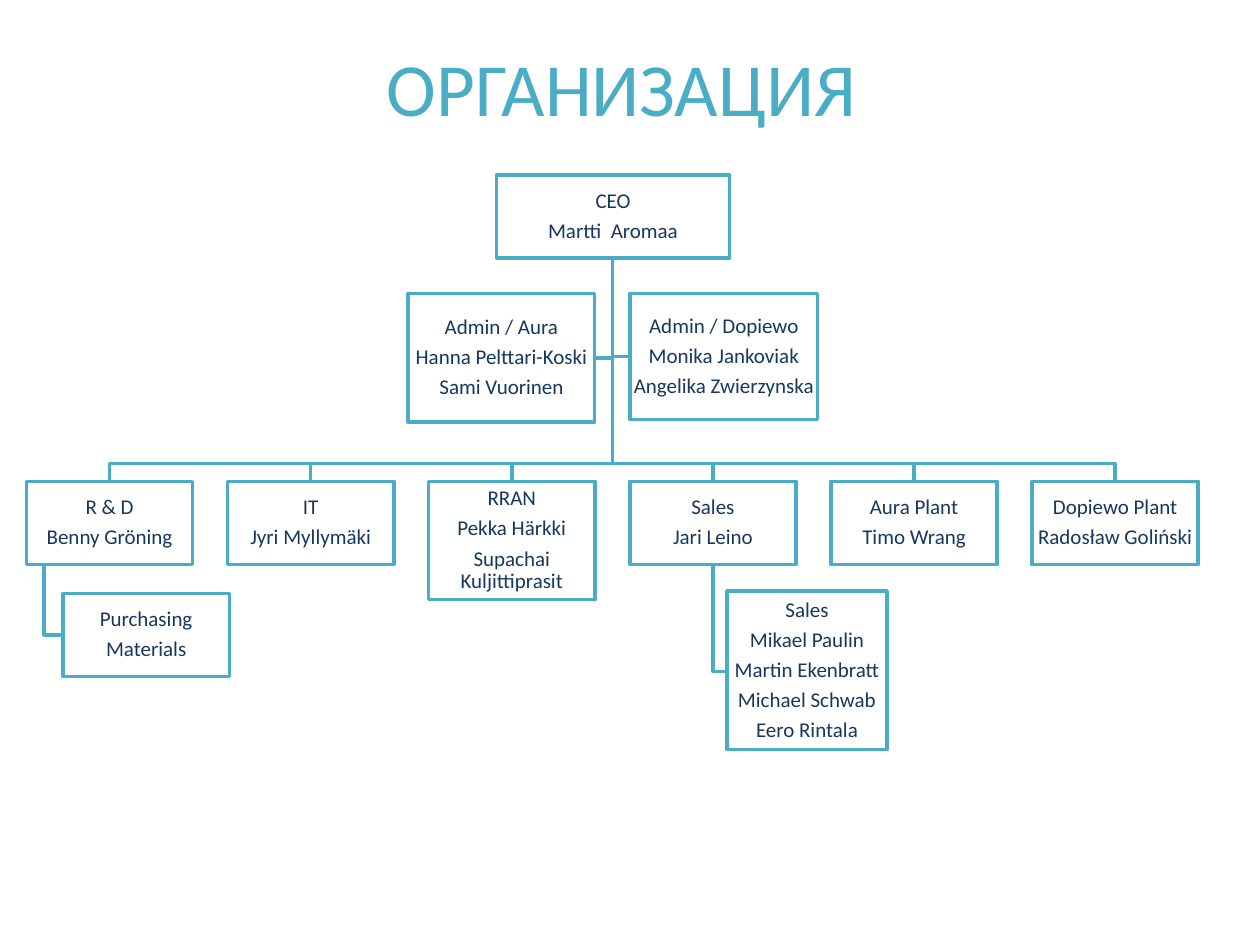
from pptx import Presentation
from pptx import util as u
from pptx.dml.color import RGBColor
from pptx.enum import shapes, text

TEAL = RGBColor(0x4B, 0xAC, 0xC6)
NAVY = RGBColor(0x17, 0x37, 0x5E)

COLUMNS, ROWS = 100, 75
CENTRE = 48.6
CEO_BOTTOM = 20.5
BUS_ROW = 36.8
UNIT_LEFT, UNIT_TOP, UNIT_STEP = 2.1, 38.2, 15.96
UNIT_WIDTH, UNIT_HEIGHT = 13.2, 6.6

UNITS = [
    (["R & D", "Benny Gröning"], UNIT_HEIGHT),
    (["IT", "Jyri Myllymäki"], UNIT_HEIGHT),
    (["RRAN", "Pekka Härkki", "Supachai Kuljittiprasit"], 9.4),
    (["Sales", "Jari Leino"], UNIT_HEIGHT),
    (["Aura Plant", "Timo Wrang"], UNIT_HEIGHT),
    (["Dopiewo Plant", "Radosław Goliński"], UNIT_HEIGHT),
]
STAFF = [
    (["CEO", "Martti  Aromaa"], (39.4, 13.9, 18.5, 6.6)),
    (["Admin / Aura", "Hanna Pelttari-Koski", "Sami Vuorinen"],
     (32.4, 23.3, 14.8, 10.2)),
    (["Admin / Dopiewo", "Monika Jankoviak", "Angelika Zwierzynska"],
     (50, 23.3, 14.9, 10)),
    (["Purchasing", "Materials"], (5, 47.1, UNIT_WIDTH, UNIT_HEIGHT)),
    (["Sales", "Mikael Paulin", "Martin Ekenbratt", "Michael Schwab",
      "Eero Rintala"], (57.7, 46.9, 12.7, 12.6)),
]
SIDE_BRANCHES = [
    (CENTRE, CEO_BOTTOM, 50, 28.3),
    (CENTRE, CEO_BOTTOM, 47.2, 28.4),
    (3.5, UNIT_TOP + UNIT_HEIGHT, 5, 50.4),
    (56.6, UNIT_TOP + UNIT_HEIGHT, 57.7, 53.3),
]


def apply(target, values):
    for name, value in values.items():
        setattr(target, name, value)


class Chart:
    line_width = u.Pt(2)
    label_font = {"name": "Calibri", "size": u.Pt(12)}
    title_font = {"name": "Calibri", "size": u.Pt(42.9), "bold": False}
    label_frame = {"word_wrap": True, "vertical_anchor": text.MSO_ANCHOR.MIDDLE,
                   **dict.fromkeys(("margin_left", "margin_right", "margin_top",
                                    "margin_bottom"), u.Inches(0.01))}
    label_para = {"alignment": text.PP_ALIGN.CENTER, "line_spacing": 0.9,
                  "space_before": u.Pt(0), "space_after": u.Pt(4.2)}

    def __init__(self, deck):
        self.column = deck.slide_width / COLUMNS
        self.row = deck.slide_height / ROWS
        self.page = deck.slides.add_slide(deck.slide_layouts[5])

    def place(self, left, top, *size):
        scales = (self.column, self.row) * 2
        return [round(n * scale) for n, scale in zip((left, top, *size), scales)]

    def outline(self, shape):
        shape.shadow.inherit = False
        shape.fill.background()
        shape.line.color.rgb = TEAL
        shape.line.width = self.line_width

    def title(self, words, area):
        box = self.page.shapes.title
        apply(box, dict(zip(("left", "top", "width", "height"), self.place(*area))))
        frame = box.text_frame
        frame.text = words
        apply(frame, {"auto_size": text.MSO_AUTO_SIZE.NONE, "word_wrap": True,
                      "vertical_anchor": text.MSO_ANCHOR.MIDDLE})
        para = frame.paragraphs[0]
        para.alignment = text.PP_ALIGN.CENTER
        span = para.runs[0]
        apply(span.font, self.title_font)
        span.font.color.rgb = TEAL

    def branch(self, *points):
        start, *rest = [self.place(*point) for point in points]
        builder = self.page.shapes.build_freeform(*start)
        builder.add_line_segments(rest, close=False)
        self.outline(builder.convert_to_shape())

    def box(self, lines, area):
        box = self.page.shapes.add_shape(
            shapes.MSO_SHAPE.RECTANGLE, *self.place(*area))
        self.outline(box)
        frame = box.text_frame
        apply(frame, self.label_frame)
        frame.text = "\n".join(lines)
        for para in frame.paragraphs:
            apply(para, self.label_para)
            for span in para.runs:
                apply(span.font, self.label_font)
                span.font.color.rgb = NAVY


def main():
    deck = Presentation()
    deck.slide_width, deck.slide_height = u.Inches(10), u.Inches(7.5)
    chart = Chart(deck)
    chart.title("ОРГАНИЗАЦИЯ ", (5, 3, 90, 7.7))

    lefts = [UNIT_LEFT + UNIT_STEP * index for index in range(len(UNITS))]
    for left in lefts:
        middle = left + UNIT_WIDTH / 2
        chart.branch((CENTRE, CEO_BOTTOM), (CENTRE, BUS_ROW),
                     (middle, BUS_ROW), (middle, UNIT_TOP))
    for x, top, end, bottom in SIDE_BRANCHES:
        chart.branch((x, top), (x, bottom), (end, bottom))

    for left, (lines, height) in zip(lefts, UNITS):
        chart.box(lines, (left, UNIT_TOP, UNIT_WIDTH, height))
    for lines, area in STAFF:
        chart.box(lines, area)
    deck.save("out.pptx")


if __name__ == "__main__":
    main()
